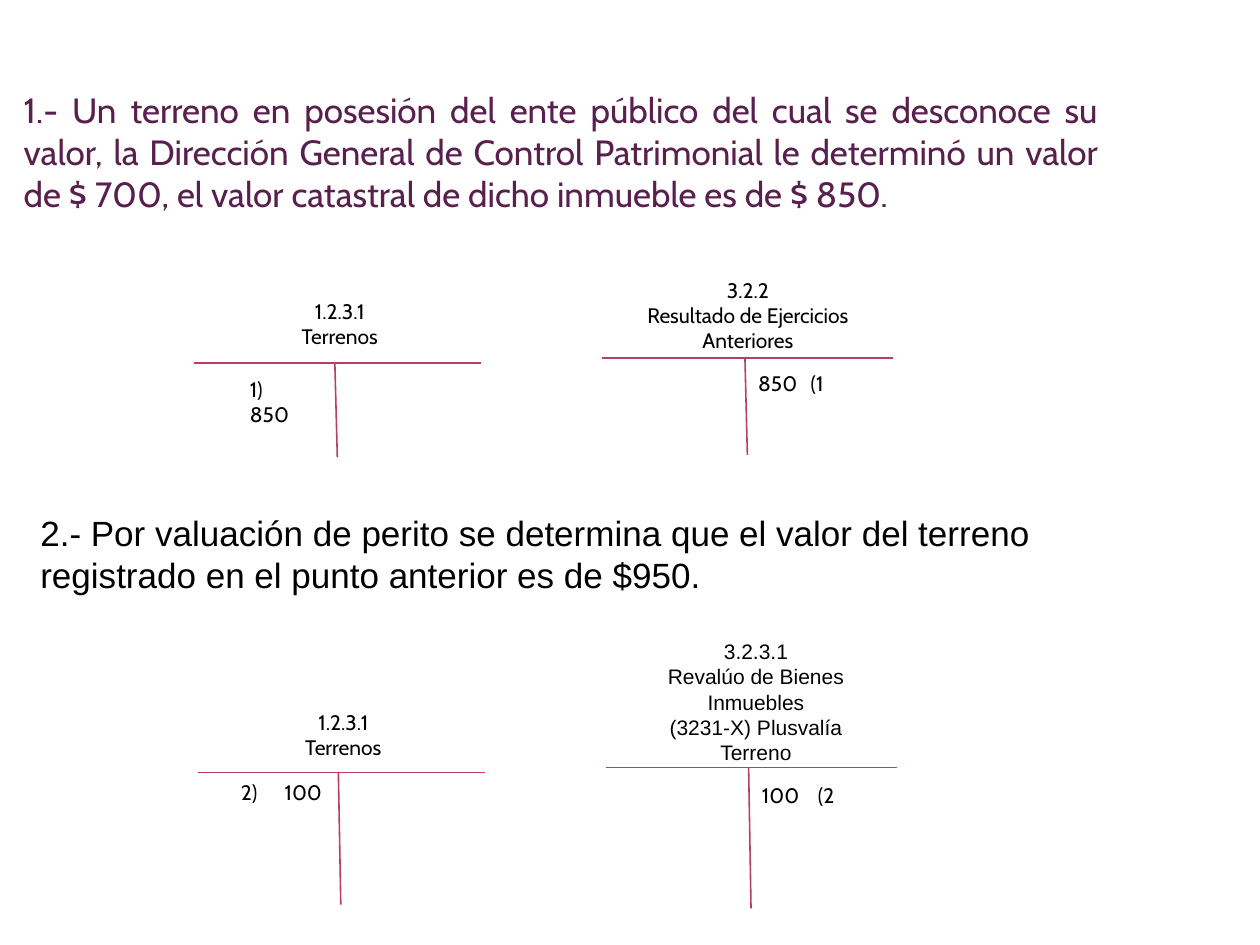
import pptx
import pptx.util
import pptx.dml.color
import pptx.enum.shapes
import pptx.enum.text
import pptx.oxml.ns
from lxml import etree

Pt = pptx.util.Pt
Align = pptx.enum.text.PP_ALIGN
qn = pptx.oxml.ns.qn
COLORS = {"plum": "591F4D", "rose": "B83D68", "black": "000000"}


def paint(name):
    return pptx.dml.color.RGBColor.from_string(COLORS[name])


def write(slide, text, box, size=12, font="Cabin", color="black",
          align=Align.LEFT, inset=7.2, tab=None):
    frame = slide.shapes.add_textbox(*map(Pt, box)).text_frame
    frame.word_wrap = True
    frame.margin_left = Pt(inset)
    for i, line in enumerate(text.split("\n")):
        par = frame.add_paragraph() if i else frame.paragraphs[0]
        par.alignment = align
        if tab:
            props = par._p.get_or_add_pPr()
            stops = etree.SubElement(props, qn("a:tabLst"))
            etree.SubElement(stops, qn("a:tab"), pos=str(Pt(tab)), algn="l")
        run = par.add_run()
        run.text = line
        run.font.size = Pt(size)
        run.font.name = font
        run.font.color.rgb = paint(color)


def rule(group, start, end):
    line = group.shapes.add_connector(
        pptx.enum.shapes.MSO_CONNECTOR.STRAIGHT, *map(Pt, start + end))
    line.line.color.rgb = paint("rose")
    line.line.width = Pt(0.9)
    etree.SubElement(line._element.spPr, qn("a:effectLst"))


def account(slide, box, title, head, font="Cabin", wide=147.6,
            debit=None, credit=None, inset=7.2, tab=30, drop=4):
    left, top, width, height = box
    stem = left + width * 0.49
    group = slide.shapes.add_group_shape()
    rule(group, (left, top), (left + width, top))
    rule(group, (stem, top), (stem + 1.4, top + height))
    write(slide, title, (left + 9.4, top - head, wide, head),
          font=font, align=Align.CENTER)
    if debit:
        write(slide, debit, (left - 39, top + drop, 118, 36),
              inset=inset, tab=tab)
    if credit:
        write(slide, credit, (left + 82, top + drop, 118, 36), tab=tab)


def main():
    deck = pptx.Presentation()
    deck.slide_width, deck.slide_height = Pt(720), Pt(540)
    slide = deck.slides.add_slide(deck.slide_layouts[6])

    write(slide, "1.- Un terreno en posesión del ente público del cual se "
          "desconoce su valor, la Dirección General de Control Patrimonial "
          "le determinó un valor de $ 700, el valor catastral de dicho "
          "inmueble es de $ 850.", (6.5, 47, 628.5, 104), size=20,
          color="plum", align=Align.JUSTIFY)
    account(slide, (111, 207.4, 164, 54), "1.2.3.1\nTerrenos", 40.4,
            debit="1)\t850", inset=70.8, tab=18.2)
    account(slide, (344.2, 204.5, 166.3, 55.4),
            "3.2.2\nResultado de Ejercicios Anteriores", 49.7,
            credit="850\t(1")

    write(slide, "2.- Por valuación de perito se determina que el valor del "
          "terreno registrado en el punto anterior es de $950.",
          (16, 289, 636.5, 80), size=20, font="Arial")
    account(slide, (113, 441.4, 164, 75.6), "1.2.3.1\nTerrenos", 39.6,
            debit="2)\t100", inset=63.6, tab=25, drop=0.7)
    account(slide, (346.3, 438.5, 166.3, 80.6),
            "3.2.3.1\nRevalúo de Bienes Inmuebles\n"
            "(3231-X) Plusvalía Terreno", 77, font="Arial", wide=152.6,
            credit="100\t(2", tab=32, drop=5)
    deck.save("out.pptx")


if __name__ == "__main__":
    main()
